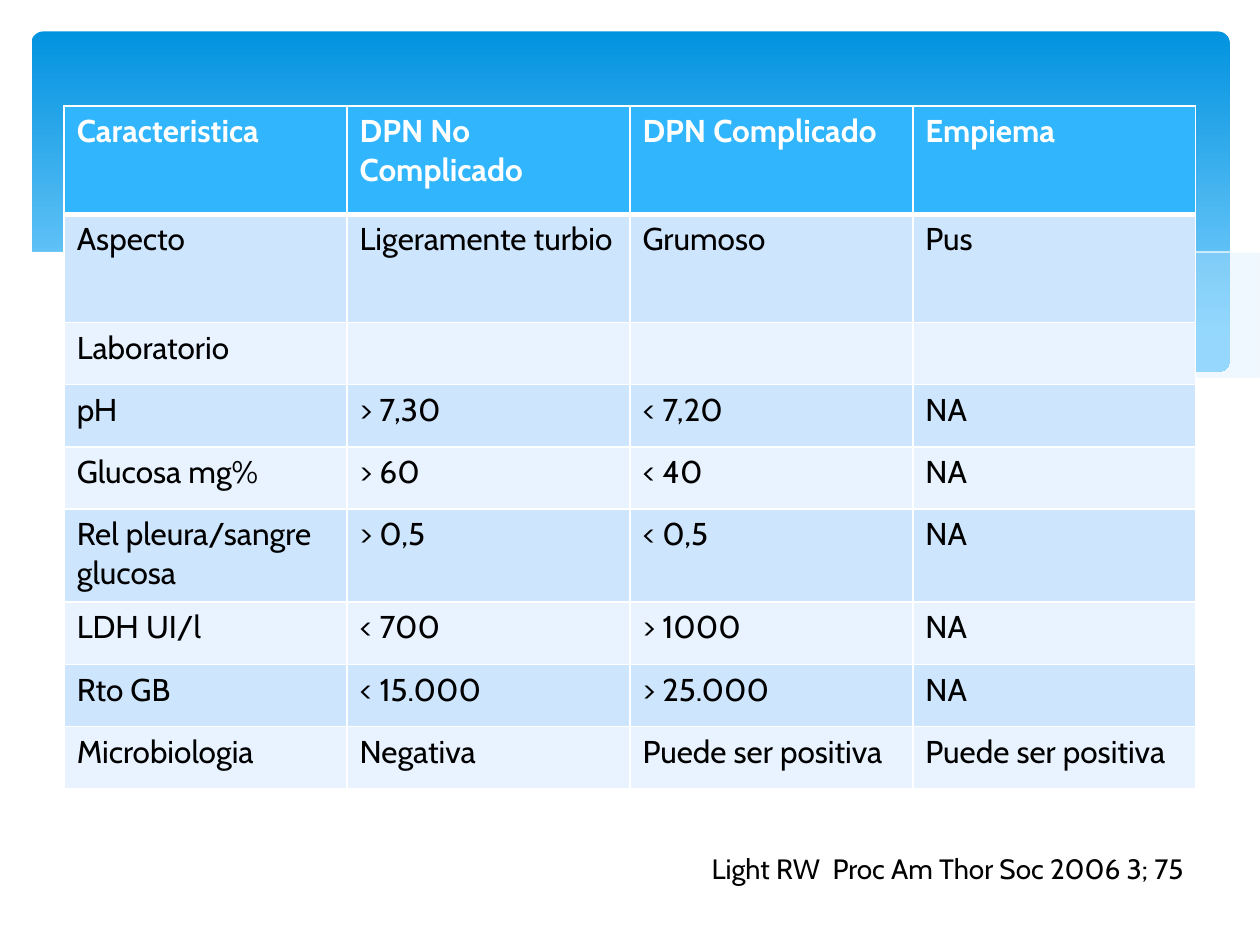
from dataclasses import dataclass
from typing import Optional

from lxml import etree
from pptx import Presentation
from pptx.dml.color import RGBColor
from pptx.enum.shapes import MSO_SHAPE
from pptx.oxml.ns import qn
from pptx.util import Inches, Pt

ROUND_RECT = MSO_SHAPE.ROUNDED_RECTANGLE
FONT = "Cabin"
COLORS = {
    "sky_top": "0293E0", "sky_bottom": "83D3FE", "mist": "C6E7FC",
    "white": "FFFFFF", "black": "000000",
    "header": "31B6FD", "band": "CEE5FE", "band_light": "E8F3FF",
}


@dataclass
class Wave:
    """A banner curve: filled when fill is set, otherwise a thin line."""
    points: list[tuple[float, float]]
    fill: Optional[str] = None
    opacity: int = 100


WAVES = [
    # right-hand swell
    Wave([(9.76, 2), (9.48, 2.04), (9.21, 2.1), (8.91, 2.16), (8.61, 2.23),
          (8.05, 2.37), (7.53, 2.48), (7.06, 2.57), (6.61, 2.65), (6.91, 2.69),
          (7.19, 2.72), (7.45, 2.75), (7.69, 2.77), (8.03, 2.78), (8.35, 2.77),
          (8.63, 2.75), (8.89, 2.72), (9.13, 2.67), (9.35, 2.62), (9.49, 2.57),
          (9.63, 2.52), (9.76, 2.47)], "mist", 29),
    # central swell
    Wave([(8.93, 2.73), (8.66, 2.69), (8.07, 2.6), (7.41, 2.47), (6.68, 2.31),
          (6.29, 2.22), (5.98, 2.14), (5.69, 2.08), (5.41, 2.03), (5.14, 1.98),
          (4.89, 1.94), (4.42, 1.89), (3.99, 1.86), (3.61, 1.85), (3.28, 1.87),
          (2.86, 1.91), (3.23, 1.96), (3.62, 2.03), (4.04, 2.11), (4.49, 2.22),
          (5.3, 2.4), (5.84, 2.52), (6.18, 2.58), (6.5, 2.64), (6.8, 2.68),
          (7.09, 2.72), (7.36, 2.75), (7.61, 2.77), (7.96, 2.78), (8.28, 2.78),
          (8.57, 2.77), (8.76, 2.75)], "mist", 40),
    # thin crests
    Wave([(3.09, 1.95), (3.28, 1.92), (3.53, 1.89), (3.87, 1.87), (4.16, 1.87),
          (4.5, 1.88), (4.89, 1.9), (5.33, 1.94), (5.82, 2), (6.36, 2.08),
          (6.95, 2.19), (7.6, 2.33), (8.31, 2.51), (9.07, 2.72)]),
    Wave([(6.13, 2.57), (6.53, 2.46), (6.95, 2.35), (7.48, 2.23), (8.06, 2.1),
          (8.66, 1.99), (8.95, 1.94), (9.24, 1.9), (9.51, 1.87), (9.75, 1.85)]),
    # white lower edge of the banner
    Wave([(9.77, 2.46), (9.59, 2.53), (9.4, 2.59), (9.2, 2.65), (8.99, 2.69),
          (8.75, 2.73), (8.5, 2.75), (8.23, 2.77), (7.93, 2.76), (7.61, 2.75),
          (7.26, 2.72), (6.88, 2.68), (6.48, 2.62), (6.03, 2.54), (5.55, 2.45),
          (5.03, 2.33), (4.47, 2.2), (3.91, 2.07), (3.4, 1.97), (2.92, 1.9),
          (2.5, 1.86), (2.11, 1.84), (1.77, 1.84), (1.46, 1.85), (1.19, 1.87),
          (0.95, 1.91), (0.76, 1.95), (0.59, 1.99), (0.46, 2.03), (0.36, 2.07),
          (0.23, 2.13), (0.23, 3.29), (9.77, 3.29)], "white"),
]

ROWS = [
    ("Caracteristica", "DPN No Complicado", "DPN Complicado", "Empiema"),
    ("Aspecto", "Ligeramente turbio", "Grumoso", "Pus"),
    ("Laboratorio", "", "", ""),
    ("pH", "> 7,30", "< 7,20", "NA"),
    ("Glucosa mg%", "> 60", "< 40", "NA"),
    ("Rel pleura/sangre glucosa", "> 0,5", "< 0,5", "NA"),
    ("LDH UI/l", "< 700", "> 1000", "NA"),
    ("Rto GB", "< 15.000", "> 25.000", "NA"),
    ("Microbiologia", "Negativa", "Puede ser positiva", "Puede ser positiva"),
]
TABLE_W, TABLE_H = 8.98, 5.42
TALL_ROWS = {0: 0.86, 1: 0.86, 5: 0.74}


def rgb(name: str) -> RGBColor:
    return RGBColor.from_string(COLORS[name])


def write(tf, text: str, *, size: float = 18, color: str = "black",
          bold: bool = False, spacing: Optional[float] = None) -> None:
    p = tf.paragraphs[0]
    p.line_spacing = spacing
    r = p.add_run()
    r.text = text
    r.font.name, r.font.size, r.font.bold = FONT, Pt(size), bold
    r.font.color.rgb = rgb(color)


def draw_banner(s) -> None:
    sp = s.shapes.add_shape(ROUND_RECT, Inches(0.25), Inches(0.25),
                            Inches(9.51), Inches(2.7))
    sp.adjustments[0] = 0.034
    sp.shadow.inherit = False
    sp.line.fill.background()
    sp.fill.gradient()
    sp.fill.gradient_angle = 270
    stops = ((0, "sky_top"), (0.9, "sky_bottom"))
    for stop, (position, color) in zip(sp.fill.gradient_stops, stops):
        stop.position = position
        stop.color.rgb = rgb(color)


def draw_wave(s, wave: Wave) -> None:
    first, *rest = wave.points
    fb = s.shapes.build_freeform(*first, scale=Inches(1))
    fb.add_line_segments(rest, close=wave.fill is not None)
    sp = fb.convert_to_shape()
    sp.shadow.inherit = False
    if wave.fill is None:
        sp.fill.background()
        sp.line.color.rgb = rgb("white")
        sp.line.width = Pt(0)
        return
    sp.line.fill.background()
    sp.fill.solid()
    sp.fill.fore_color.rgb = rgb(wave.fill)
    if wave.opacity < 100:
        clr = sp.fill._xPr.find(".//" + qn("a:srgbClr"))
        etree.SubElement(clr, qn("a:alpha"), val=str(wave.opacity * 1000))


def set_borders(cell, top: float, bottom: float) -> None:
    tcPr = cell._tc.get_or_add_tcPr()
    for side, width in (("L", 1), ("R", 1), ("T", top), ("B", bottom)):
        ln = etree.SubElement(tcPr, qn(f"a:ln{side}"), w=str(Pt(width)))
        fill = etree.SubElement(ln, qn("a:solidFill"))
        etree.SubElement(fill, qn("a:srgbClr"), val=COLORS["white"])


def draw_table(s) -> None:
    n_rows, n_cols = len(ROWS), len(ROWS[0])
    table = s.shapes.add_table(n_rows, n_cols, Inches(0.51), Inches(0.84),
                               Inches(TABLE_W), Inches(TABLE_H)).table
    for col in table.columns:
        col.width = Inches(TABLE_W / n_cols)
    plain_h = (TABLE_H - sum(TALL_ROWS.values())) / (n_rows - len(TALL_ROWS))
    for i, texts in enumerate(ROWS):
        table.rows[i].height = Inches(TALL_ROWS.get(i, plain_h))
        head = i == 0
        fill = "header" if head else "band" if i % 2 else "band_light"
        for j, text in enumerate(texts):
            cell = table.cell(i, j)
            # thick rule between the header and the body
            set_borders(cell, top=3 if i == 1 else 1, bottom=3 if head else 1)
            cell.fill.solid()
            cell.fill.fore_color.rgb = rgb(fill)
            if text:
                write(cell.text_frame, text, bold=head,
                      color="white" if head else "black")


def draw_citation(s) -> None:
    tb = s.shapes.add_textbox(Inches(5.55), Inches(6.74), Inches(4.02), Inches(0.34))
    tb.text_frame.word_wrap = False
    write(tb.text_frame, "Light RW  Proc Am Thor Soc 2006 3; 75", size=16, spacing=0.9)


def main() -> None:
    prs = Presentation()
    prs.slide_width, prs.slide_height = Inches(10), Inches(7.5)
    s = prs.slides.add_slide(prs.slide_layouts[6])
    # background banner
    draw_banner(s)
    for wave in WAVES:
        draw_wave(s, wave)
    # content
    draw_table(s)
    draw_citation(s)
    prs.save("out.pptx")


if __name__ == "__main__":
    main()
